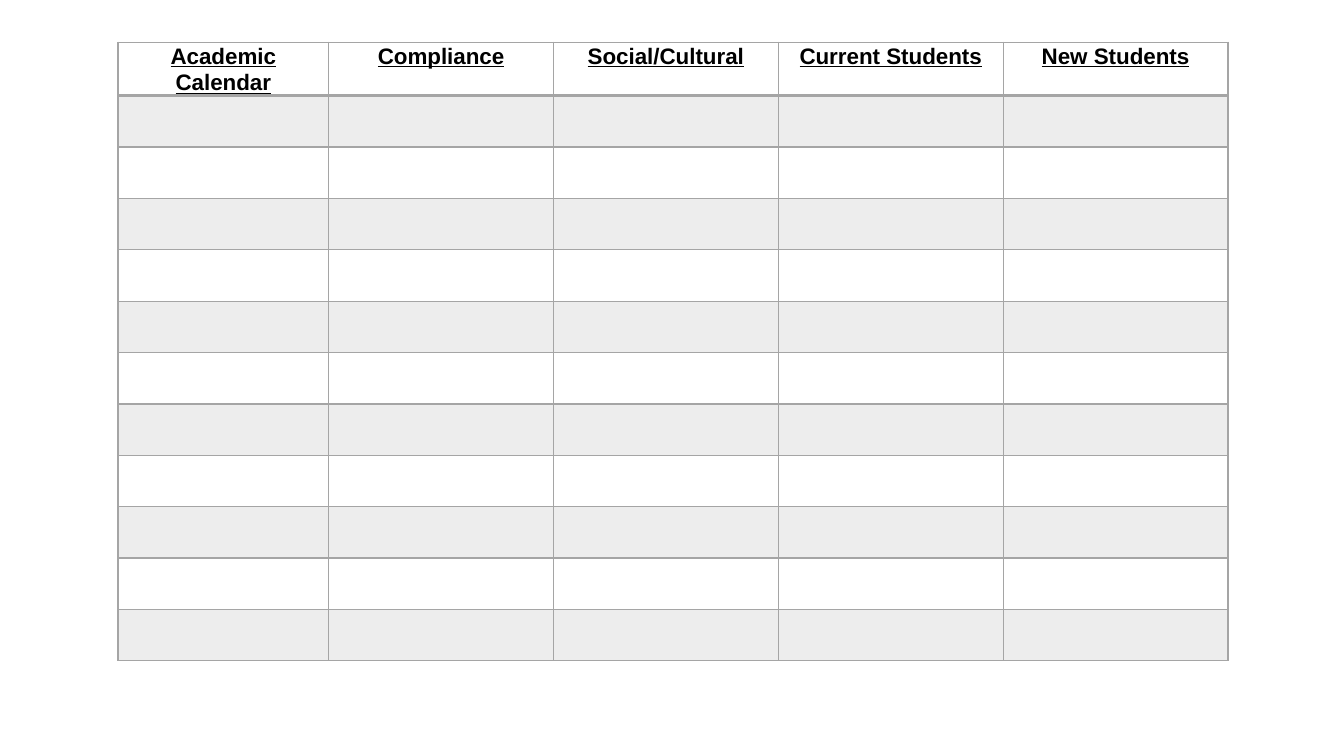
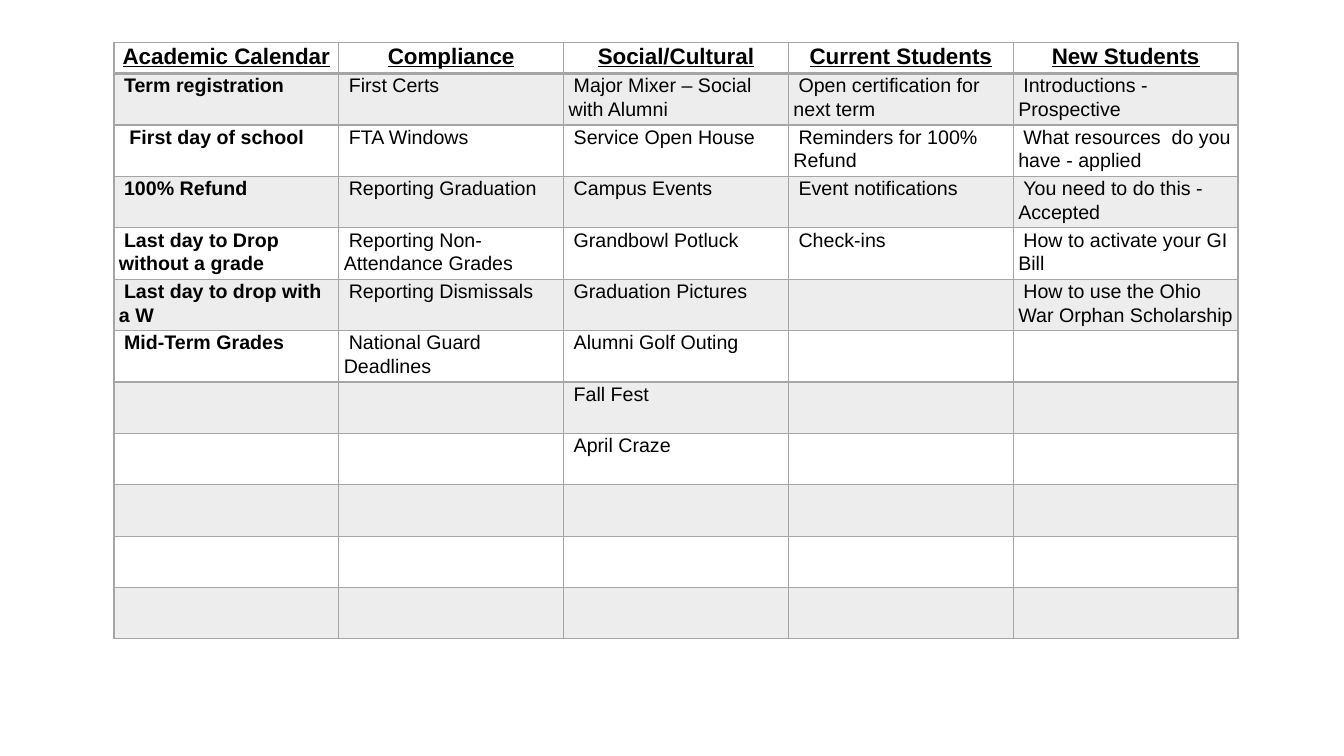
import lxml.etree
import pptx
import pptx.dml.color
import pptx.enum.text
import pptx.oxml.ns
import pptx.util

Inches = pptx.util.Inches
Pt = pptx.util.Pt
qn = pptx.oxml.ns.qn

COLORS = {"text": "000000", "grid": "A5A5A5"}
FONT = "Arial"
BAND_OPACITY = 20
TABLE_TOP = 0.42
COLUMN_WIDTH = 2.23
HEADER_HEIGHT = 0.31
ROW_HEIGHT = 0.51
BODY_ROWS = 11

HEADINGS = ["Academic Calendar", "Compliance", "Social/Cultural",
            "Current Students", "New Students"]

# One list for each column, read downwards
ACTIVITIES = [
    ["Term registration", " First day of school", "100% Refund",
     "Last day to Drop without a grade", "Last day to drop with a W",
     "Mid-Term Grades"],
    ["First Certs", "FTA Windows", "Reporting Graduation",
     "Reporting Non-Attendance Grades", "Reporting Dismissals",
     "National Guard Deadlines"],
    ["Major Mixer – Social with Alumni", "Service Open House",
     "Campus Events", "Grandbowl Potluck", "Graduation Pictures",
     "Alumni Golf Outing", "Fall Fest", "April Craze"],
    ["Open certification for next term", "Reminders for 100% Refund",
     "Event notifications", "Check-ins"],
    ["Introductions - Prospective", "What resources  do you have - applied",
     "You need to do this - Accepted", "How to activate your GI Bill",
     "How to use the Ohio War Orphan Scholarship"],
]


def add_child(parent, tag, **attributes):
    return lxml.etree.SubElement(parent, qn(tag), attributes)


def set_borders(cell, top=1, bottom=1):
    properties = cell._tc.get_or_add_tcPr()
    for side, points in (("L", 1), ("R", 1), ("T", top), ("B", bottom)):
        line = add_child(properties, f"a:ln{side}", w=str(Pt(points)))
        fill = add_child(line, "a:solidFill")
        add_child(fill, "a:srgbClr", val=COLORS["grid"])


def set_fill(cell, banded):
    if not banded:
        cell.fill.background()
        return
    cell.fill.solid()
    cell.fill.fore_color.rgb = pptx.dml.color.RGBColor.from_string(COLORS["grid"])
    color = cell._tc.tcPr.find(qn("a:solidFill")).find(qn("a:srgbClr"))
    add_child(color, "a:alpha", val=str(BAND_OPACITY * 1000))


def write_cell(cell, text, size, bold, heading=False):
    cell.margin_left = cell.margin_right = Inches(0.05)
    cell.margin_top = cell.margin_bottom = 0
    para = cell.text_frame.paragraphs[0]
    para.line_spacing = 1.07
    if heading:
        para.alignment = pptx.enum.text.PP_ALIGN.CENTER
    else:
        para.alignment = pptx.enum.text.PP_ALIGN.LEFT
        para._p.get_or_add_pPr().set("indent", str(Inches(0.05)))
    span = para.add_run()
    span.text = text
    span.font.name = FONT
    span.font.size = Pt(size)
    span.font.bold = bold
    span.font.underline = heading
    span.font.color.rgb = pptx.dml.color.RGBColor.from_string(COLORS["text"])


def add_planner(page, left, first_width, columns):
    """Draw the banded planning table; columns holds the body texts."""
    widths = [first_width] + [COLUMN_WIDTH] * (len(HEADINGS) - 1)
    heights = [HEADER_HEIGHT] + [ROW_HEIGHT] * BODY_ROWS
    table = page.shapes.add_table(
        len(heights), len(widths), Inches(left), Inches(TABLE_TOP),
        Inches(sum(widths)), Inches(sum(heights))).table
    table.horz_banding = False
    table.first_row = False
    for column, width in zip(table.columns, widths):
        column.width = Inches(width)
    for number, (row, height) in enumerate(zip(table.rows, heights)):
        row.height = Inches(height)
        for cell in row.cells:
            set_borders(cell, top=2 if number == 1 else 1,
                        bottom=2 if number == 0 else 1)
            set_fill(cell, banded=number % 2 == 1)
    for index, heading in enumerate(HEADINGS):
        write_cell(table.cell(0, index), heading, 16, True, heading=True)
    for index, texts in enumerate(columns):
        for number, text in enumerate(texts, start=1):
            write_cell(table.cell(number, index), text, 14, index == 0)


def main():
    deck = pptx.Presentation()
    deck.slide_width = Inches(13.33)
    deck.slide_height = Inches(7.5)
    blank = deck.slide_layouts[6]
    add_planner(deck.slides.add_slide(blank), 1.17, 2.09, [])
    add_planner(deck.slides.add_slide(blank), 1.13, COLUMN_WIDTH, ACTIVITIES)
    deck.save("out.pptx")


if __name__ == "__main__":
    main()
